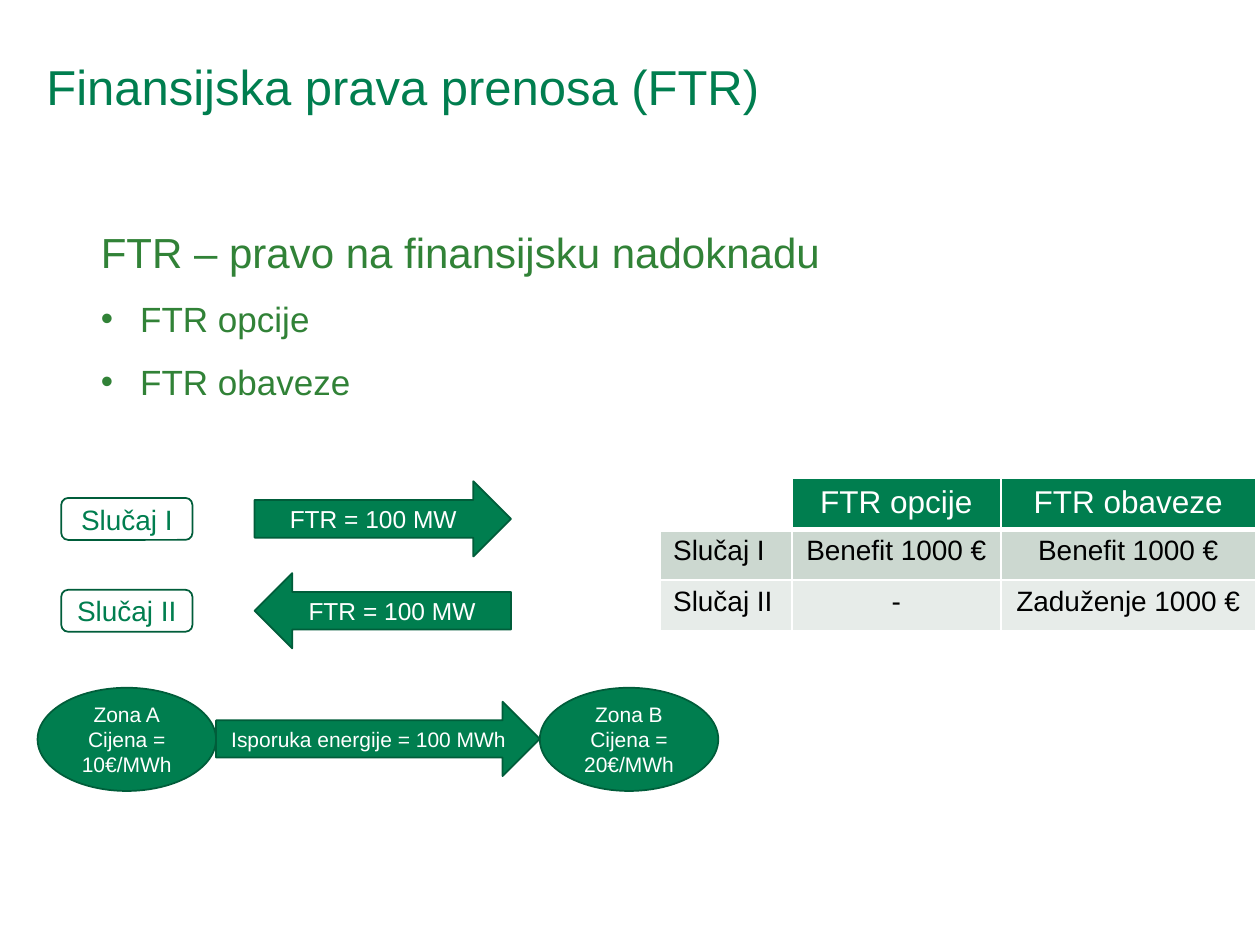
from lxml.etree import SubElement as Sub
from pptx import Presentation
from pptx.dml.color import RGBColor as RGB
from pptx.enum.shapes import MSO_SHAPE as Kind
from pptx.enum.text import MSO_ANCHOR as Anchor, PP_ALIGN as Align
from pptx.oxml.ns import qn
from pptx.util import Pt

GREEN, EDGE, LEAF = "007E4F", "005D3A", "318237"
WHITE, BLACK = "FFFFFF", "000000"


def tint(code):
    return RGB.from_string(code)


def write(frame, text, size, color, align=Align.LEFT, space=1.0, bullet=None, more=False):
    for line in text.split("\n"):
        para = frame.add_paragraph() if more else frame.paragraphs[0]
        more = True
        para.alignment, para.line_spacing = align, space
        if bullet:
            props = para._p.get_or_add_pPr()
            props.set("marL", str(Pt(22.5)))
            props.set("indent", str(-Pt(22.5)))
            Sub(props, qn("a:buFont"), typeface="Arial")
            Sub(props, qn("a:buChar"), char=bullet)
        run = para.add_run()
        run.text = line
        font = run.font
        font.name, font.size, font.bold = "Arial", Pt(size), False
        font.color.rgb = tint(color)


class Deck:
    """Holds the style and the current slide, and draws each kind of element."""

    def __init__(self):
        self.show = Presentation()
        self.show.slide_width, self.show.slide_height = Pt(720), Pt(540)
        self.slide = self.show.slides.add_slide(self.show.slide_layouts[6])
        self.edge, self.thin, self.thick = EDGE, 1, 3

    def box(self, *area, anchor=Anchor.TOP):
        frame = self.slide.shapes.add_textbox(*map(Pt, area)).text_frame
        frame.word_wrap, frame.vertical_anchor = True, anchor
        return frame

    def shape(self, kind, area, text, size, fill=GREEN, color=WHITE):
        item = self.slide.shapes.add_shape(kind, *map(Pt, area))
        item.shadow.inherit = False
        item.fill.solid()
        item.fill.fore_color.rgb = tint(fill)
        item.line.color.rgb = tint(self.edge)
        item.line.width = Pt(self.thin)
        frame = item.text_frame
        frame.word_wrap, frame.vertical_anchor = True, Anchor.MIDDLE
        write(frame, text, size, color, align=Align.CENTER)

    def border(self, cell, head):
        props = cell._tc.get_or_add_tcPr()
        for side in "LRTB":
            width = self.thick if head and side == "B" else self.thin
            line = Sub(props, qn("a:ln" + side), w=str(Pt(width)))
            Sub(Sub(line, qn("a:solidFill")), qn("a:srgbClr"), val=WHITE)

    def table(self, left, top, cols, rows, data, fills):
        area = map(Pt, (left, top, sum(cols), sum(rows)))
        grid = self.slide.shapes.add_table(len(rows), len(cols), *area).table
        for col, width in zip(grid.columns, cols):
            col.width = Pt(width)
        for r, row in enumerate(data):
            grid.rows[r].height = Pt(rows[r])
            for c, text in enumerate(row):
                cell = grid.cell(r, c)
                self.border(cell, r == 0)
                if not text:
                    cell.fill.background()
                    continue
                cell.fill.solid()
                cell.fill.fore_color.rgb = tint(fills[r])
                size, color = (16, BLACK) if r else (18, WHITE)
                align = Align.CENTER if c else Align.LEFT
                write(cell.text_frame, text, size, color, align=align)


def main():
    deck = Deck()
    title = deck.box(19.5, 24.5, 620.5, 53, anchor=Anchor.MIDDLE)
    write(title, "Finansijska prava prenosa (FTR)", 28, GREEN, space=0.9)

    body = deck.box(50.5, 111.5, 630, 196.5)
    write(body, "FTR – pravo na finansijsku nadoknadu", 24, LEAF, space=1.5)
    write(body, "FTR opcije\nFTR obaveze", 20, LEAF, space=1.5, bullet="•", more=True)

    cases = [("Slučaj I", Kind.RIGHT_ARROW), ("Slučaj II", Kind.LEFT_ARROW)]
    for n, (name, arrow) in enumerate(cases):
        mid = 296.5 + 52.5 * n
        deck.shape(Kind.ROUNDED_RECTANGLE, (35, mid - 12, 75, 24), name, 16,
                   fill=WHITE, color=GREEN)
        deck.shape(arrow, (145.5, mid - 21.5, 146.5, 43), "FTR = 100 MW", 14)

    zones = [("A", 10, 21.5), ("B", 20, 308.5)]
    for name, price, left in zones:
        deck.shape(Kind.OVAL, (left, 393, 102, 59),
                   f"Zona {name}\nCijena = {price}€/MWh", 12)
    deck.shape(Kind.RIGHT_ARROW, (123.5, 401, 185, 42.5), "Isporuka energije = 100 MWh", 12)

    data = [
        ("", "FTR opcije", "FTR obaveze"),
        ("Slučaj I", "Benefit 1000 €", "Benefit 1000 €"),
        ("Slučaj II", "-", "Zaduženje 1000 €"),
    ]
    deck.table(377.5, 273.5, (75, 119.5, 145.5), (29, 29, 29), data,
               (GREEN, "CCD8D0", "E7ECE9"))
    deck.show.save("out.pptx")


if __name__ == "__main__":
    main()
